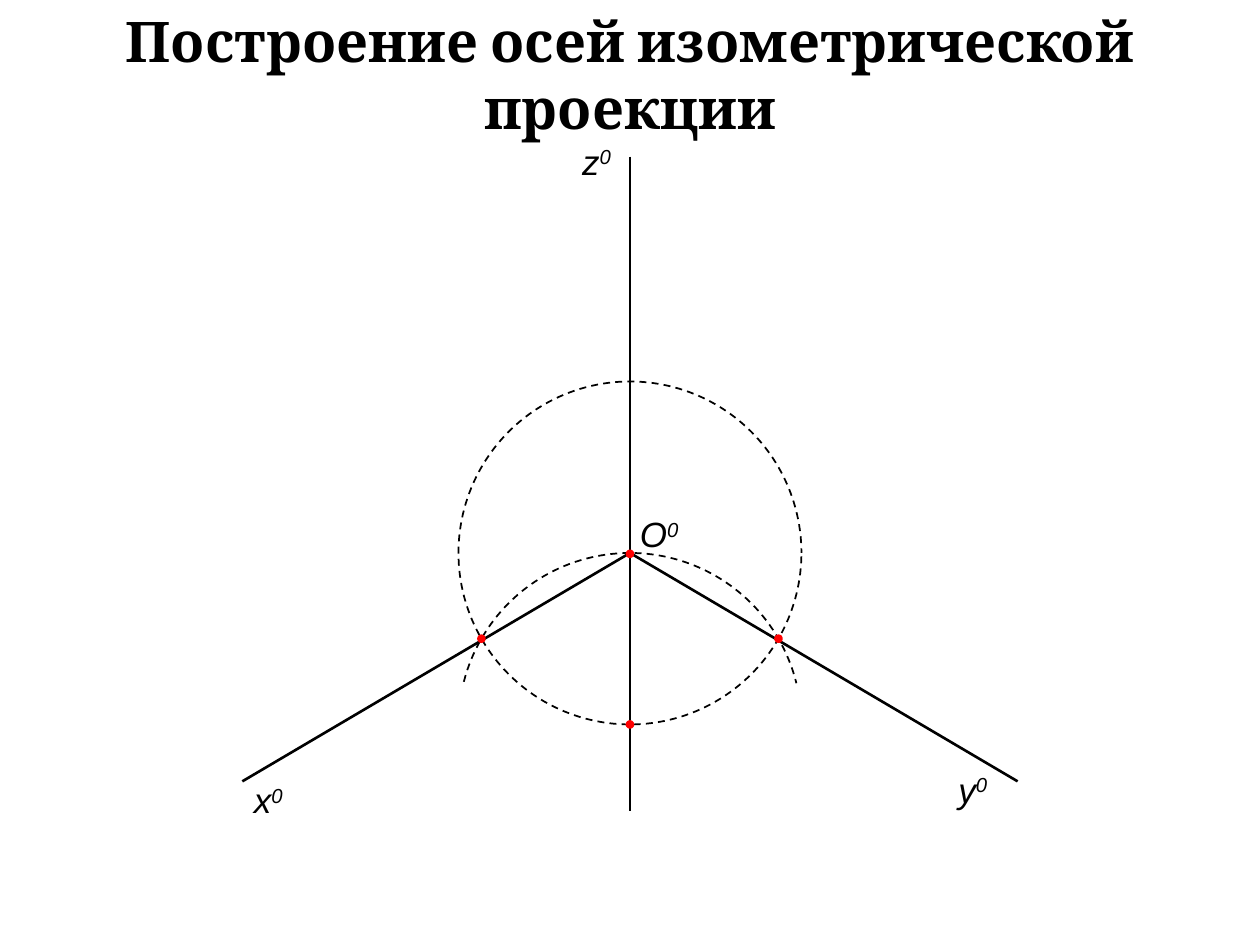
from math import cos, radians, sin

from lxml import etree
from pptx import Presentation
from pptx.dml.color import RGBColor
from pptx.enum.dml import MSO_LINE
from pptx.enum.shapes import MSO_CONNECTOR, MSO_SHAPE
from pptx.enum.text import MSO_ANCHOR, MSO_AUTO_SIZE, PP_ALIGN
from pptx.oxml.ns import qn
from pptx.util import Pt

DASH = MSO_LINE.DASH
STRAIGHT = MSO_CONNECTOR.STRAIGHT
ARC, OVAL = MSO_SHAPE.ARC, MSO_SHAPE.OVAL
TOP, CENTER = MSO_ANCHOR.TOP, PP_ALIGN.CENTER
GROW = MSO_AUTO_SIZE.SHAPE_TO_FIT_TEXT

COLORS = {"ink": "000000", "dot": "FF0000"}
OX, OY = 360, 316  # origin of the axes
RADIUS = 98
DOT = 2.9


def color(name):
    return RGBColor.from_string(COLORS[name])


def style(font, face, size):
    font.name, font.size = face, Pt(size)
    font.color.rgb = color("ink")


def add_title(slide, text):
    title = slide.shapes.title
    title.left, title.top, title.width, title.height = Pt(0), Pt(0), Pt(720), Pt(34)
    frame = title.text_frame
    frame.text = text
    frame.word_wrap = True
    frame.auto_size = MSO_AUTO_SIZE.NONE
    frame.vertical_anchor = TOP
    para = frame.paragraphs[0]
    para.alignment = CENTER
    para.line_spacing = 1.0
    para.space_before = Pt(0)
    font = para.runs[0].font
    style(font, "Cambria", 32)
    font.bold = True


def add_axis(slide, x1, y1, x2, y2):
    axis = slide.shapes.add_connector(STRAIGHT, Pt(x1), Pt(y1), Pt(x2), Pt(y2))
    axis.line.color.rgb = color("ink")
    axis.line.width = Pt(1.5)
    etree.SubElement(axis._element.spPr, qn("a:effectLst"))


def add_round(slide, kind, x, y, size):
    """Add a round shape centred on x, y."""
    shape = slide.shapes.add_shape(
        kind, Pt(x - size / 2), Pt(y - size / 2), Pt(size), Pt(size))
    shape.shadow.inherit = False
    return shape


def add_arc(slide, x, y, start, end):
    arc = add_round(slide, ARC, x, y, 2 * RADIUS)
    # Angles are stored in 60000ths of a degree, scaled down by 100000
    arc.adjustments[0], arc.adjustments[1] = start * 0.6, end * 0.6
    arc.fill.background()
    arc.line.color.rgb = color("ink")
    arc.line.width = Pt(1)
    arc.line.dash_style = DASH


def add_dot(slide, x, y):
    dot = add_round(slide, OVAL, x, y, DOT)
    dot.fill.solid()
    dot.fill.fore_color.rgb = color("dot")
    dot.line.color.rgb = color("dot")
    dot.line.width = Pt(2)


def add_label(slide, letter, x, y, width):
    box = slide.shapes.add_textbox(Pt(x), Pt(y), Pt(width), Pt(31.5))
    frame = box.text_frame
    frame.word_wrap = True
    frame.auto_size = GROW
    para = frame.paragraphs[0]
    for text in (letter, "0"):
        run = para.add_run()
        run.text = text
        style(run.font, "Arial", 20)
        run.font.italic = True
    para.runs[1].font._element.set("baseline", "30000")


def main():
    deck = Presentation()
    deck.slide_width, deck.slide_height = Pt(720), Pt(540)
    slide = deck.slides.add_slide(deck.slide_layouts[5])
    add_title(slide, "Построение осей изометрической проекции")

    # Vertical axis and compass arcs
    add_axis(slide, OX, 89.5, OX, 463.5)
    add_arc(slide, OX, OY, 1.13, 0)
    add_arc(slide, OX, OY + RADIUS, 194.4, 346.1)

    # Slanted axes
    for side in (1, -1):
        add_axis(slide, OX, OY, OX + side * 221.5, 446.5)

    # Construction points: the origin and three on the circle
    add_dot(slide, OX, OY + 0.5)
    for angle in (30, 90, 150):
        turn = radians(angle)
        add_dot(slide, OX + RADIUS * cos(turn), OY + RADIUS * sin(turn))

    # Axis labels
    for letter, x, y, width in (
        ("О", 358.5, 289.5, 45.5),
        ("z", 325.5, 76.5, 34.5),
        ("x", 138, 441.5, 34.5),
        ("y", 540.5, 435.5, 34.5),
    ):
        add_label(slide, letter, x, y, width)

    deck.save("out.pptx")


if __name__ == "__main__":
    main()
